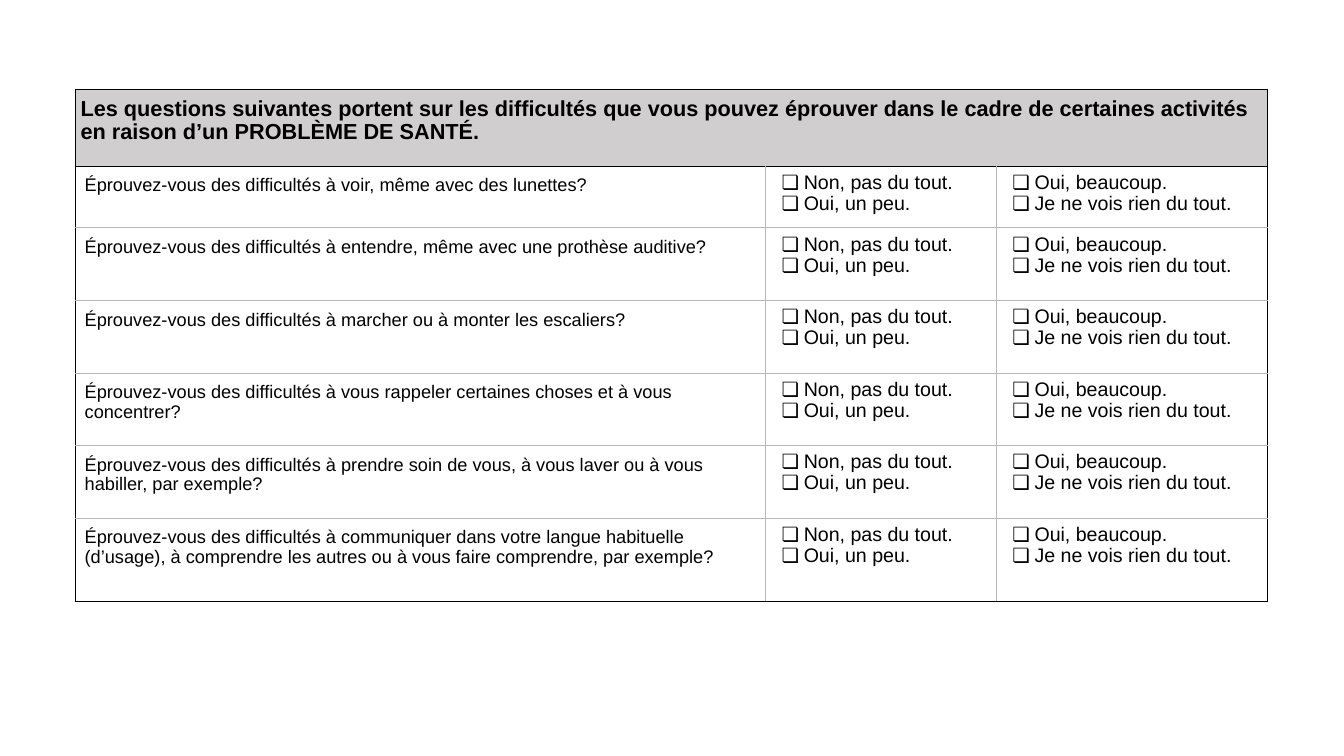
from lxml import etree
from pptx import Presentation
from pptx import util as u
from pptx.dml.color import RGBColor
from pptx.oxml.ns import qn

HEADING = ("Les questions suivantes portent sur les difficultés que vous pouvez éprouver "
           "dans le cadre de certaines activités en raison d’un PROBLÈME DE SANTÉ.")
QUESTIONS = [
    "Éprouvez-vous des difficultés à voir, même avec des lunettes?",
    "Éprouvez-vous des difficultés à entendre, même avec une prothèse auditive?",
    "Éprouvez-vous des difficultés à marcher ou à monter les escaliers?",
    "Éprouvez-vous des difficultés à vous rappeler certaines choses et à vous concentrer?",
    "Éprouvez-vous des difficultés à prendre soin de vous, à vous laver ou à vous habiller, par exemple?",
    "Éprouvez-vous des difficultés à communiquer dans votre langue habituelle (d’usage), "
    "à comprendre les autres ou à vous faire comprendre, par exemple?",
]
ANSWERS = [
    ["Non, pas du tout.", "Oui, un peu."],
    ["Oui, beaucoup.", "Je ne vois rien du tout."],
]
COLS = [13.69, 4.58, 5.38]
ROWS = [1.52, 1.23, 1.44, 1.44, 1.44, 1.44, 1.66]
LEFT, TOP = 1.5, 1.77
THEME = {
    "font": "Arial", "text": "000000", "head_fill": "D0CECE", "body_fill": "FFFFFF",
    "frame": ("000000", 1.5), "rule": ("000000", 1), "grid": ("B7B7B7", 1),
    "head_size": 31, "question_size": 26, "answer_size": 28, "spacing": 0.96,
}
INSETS = {
    "head": (0.1, 0.17, 0.1, 0.05),
    "question": (0.18, 0.2, 0.1, 0),
    "answers": [(0.26, 0.13, 0.1, 0), (0.26, 0.13, 0, 0)],
}


def set_borders(cell, row, col):
    last_row, last_col = len(ROWS) - 1, len(COLS) - 1
    frame, rule, grid = THEME["frame"], THEME["rule"], THEME["grid"]
    sides = {
        "lnL": frame if col == 0 else grid,
        "lnR": frame if col == last_col or row == 0 else grid,
        "lnT": frame if row == 0 else rule if row == 1 else grid,
        "lnB": rule if row == 0 else frame if row == last_row else grid,
    }
    tcPr = cell._tc.get_or_add_tcPr()
    for i, (tag, (color, width)) in enumerate(sides.items()):
        ln = etree.Element(qn("a:" + tag), w=str(u.Pt(width)))
        fill = etree.SubElement(ln, qn("a:solidFill"))
        etree.SubElement(fill, qn("a:srgbClr"), val=color)
        tcPr.insert(i, ln)


def set_checkbox(p):
    pPr = p._p.get_or_add_pPr()
    pPr.set("marL", str(u.Inches(0.5)))
    pPr.set("indent", str(u.Inches(-0.44)))
    color = etree.SubElement(pPr, qn("a:buClr"))
    etree.SubElement(color, qn("a:srgbClr"), val=THEME["text"])
    etree.SubElement(pPr, qn("a:buFont"), typeface=THEME["font"])
    etree.SubElement(pPr, qn("a:buChar"), char="❏")


def fill_cell(cell, lines, size, insets, fill, bold=False, checkbox=False):
    cell.margin_left, cell.margin_top, cell.margin_right, cell.margin_bottom = map(u.Inches, insets)
    cell.fill.solid()
    cell.fill.fore_color.rgb = RGBColor.from_string(fill)
    tf = cell.text_frame
    for i, line in enumerate(lines):
        p = tf.add_paragraph() if i else tf.paragraphs[0]
        if checkbox:
            set_checkbox(p)
        p.line_spacing = THEME["spacing"]
        r = p.add_run()
        r.text = line
        r.font.name = THEME["font"]
        r.font.size = u.Pt(size)
        r.font.bold = bold
        r.font.color.rgb = RGBColor.from_string(THEME["text"])


def main():
    prs = Presentation()
    prs.slide_width, prs.slide_height = u.Inches(26.67), u.Inches(15)
    s = prs.slides.add_slide(prs.slide_layouts[6])
    frame = s.shapes.add_table(len(ROWS), len(COLS), u.Inches(LEFT), u.Inches(TOP),
                               u.Inches(sum(COLS)), u.Inches(sum(ROWS)))
    table = frame.table
    table.horz_banding = False
    for column, width in zip(table.columns, COLS):
        column.width = u.Inches(width)
    for row, height in zip(table.rows, ROWS):
        row.height = u.Inches(height)

    table.cell(0, 0).merge(table.cell(0, len(COLS) - 1))
    fill_cell(table.cell(0, 0), [HEADING], THEME["head_size"], INSETS["head"],
              THEME["head_fill"], bold=True)
    for row, question in enumerate(QUESTIONS, 1):
        fill_cell(table.cell(row, 0), [question], THEME["question_size"],
                  INSETS["question"], THEME["body_fill"])
        for col, (answers, insets) in enumerate(zip(ANSWERS, INSETS["answers"]), 1):
            fill_cell(table.cell(row, col), answers, THEME["answer_size"], insets,
                      THEME["body_fill"], checkbox=True)
    for row in range(len(ROWS)):
        for col in range(len(COLS)):
            set_borders(table.cell(row, col), row, col)
    prs.save("out.pptx")


if __name__ == "__main__":
    main()
